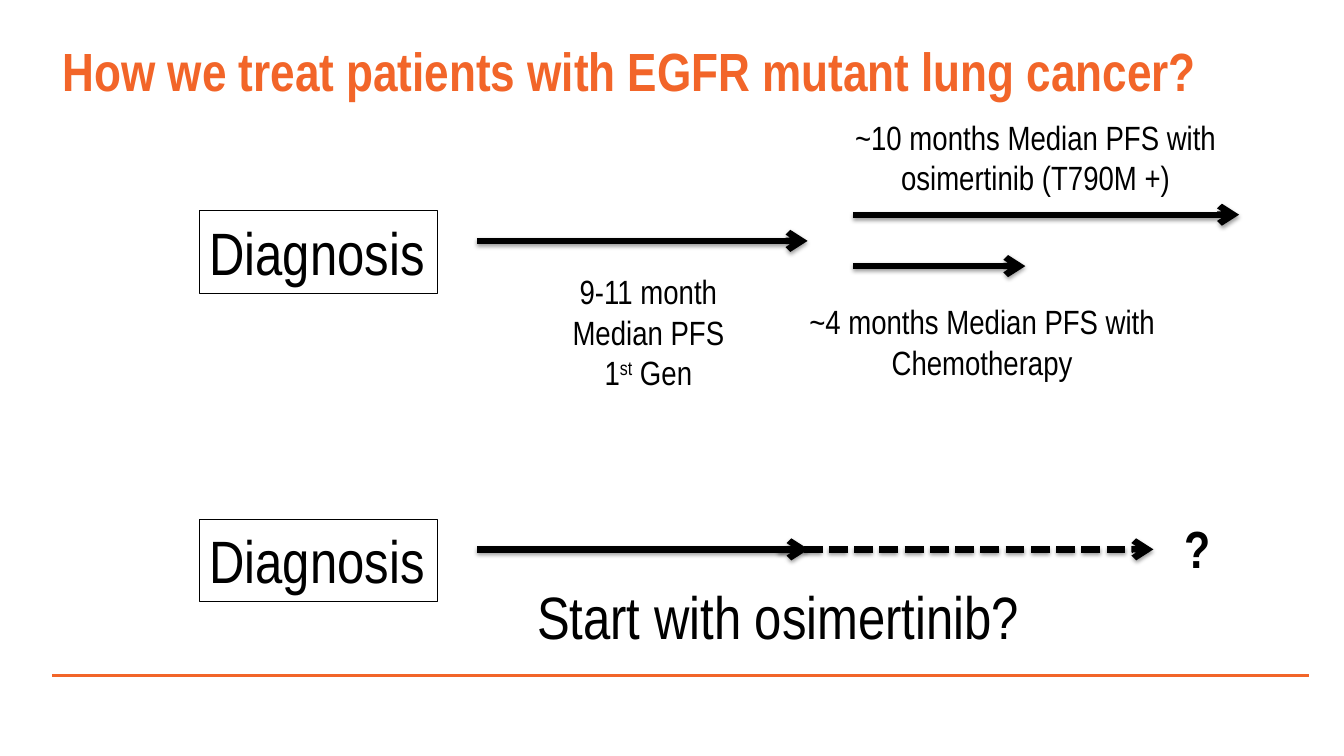
import pptx
import pptx.util
import pptx.dml.color
import pptx.enum.dml
import pptx.enum.shapes
import pptx.enum.text
import pptx.oxml
import pptx.oxml.ns

Inches = pptx.util.Inches
Pt = pptx.util.Pt
Align = pptx.enum.text.PP_ALIGN
Fit = pptx.enum.text.MSO_AUTO_SIZE
NS = pptx.oxml.ns.nsdecls("a")
HUES = {name: pptx.dml.color.RGBColor.from_string(code)
        for name, code in {"ink": "000000", "orange": "F26529"}.items()}
SHADE = (f'<a:effectLst {NS}><a:outerShdw blurRad="{Pt(3.1)}" dist="{Pt(1.6)}" '
         'dir="5400000" rotWithShape="0"><a:srgbClr val="000000">'
         '<a:alpha val="38000"/></a:srgbClr></a:outerShdw></a:effectLst>')


def style(shape, size, hue="ink", bold=False, align=Align.LEFT):
    for para in shape.text_frame.paragraphs:
        para.alignment = align
        for run in para.runs:
            run.font.name = "Arial Narrow"
            run.font.size = Pt(size)
            run.font.bold = bold
            run.font.color.rgb = HUES[hue]


def draw(left, right, top, hue, width, effect):
    line = slide.shapes.add_connector(
        pptx.enum.shapes.MSO_CONNECTOR.STRAIGHT,
        Inches(left), Inches(top), Inches(right), Inches(top))
    line.line.color.rgb = HUES[hue]
    line.line.width = Pt(width)
    line._element.spPr.append(pptx.oxml.parse_xml(effect))
    return line


deck = pptx.Presentation()
deck.slide_width = Inches(13.33)
deck.slide_height = Inches(7.5)
slide = deck.slides.add_slide(deck.slide_layouts[5])

# Footer rule
draw(0.52, 12.98, 6.7, "orange", 2.25, f"<a:effectLst {NS}/>")

# Title
title = slide.shapes.title
title.left, title.top = Inches(0.52), Inches(0.1)
title.width, title.height = Inches(12.46), Inches(1.18)
title.text_frame.text = "How we treat patients with EGFR mutant lung cancer?"
title.text_frame.auto_size = Fit.NONE
title.text_frame.vertical_anchor = pptx.enum.text.MSO_ANCHOR.MIDDLE
style(title, 38.4, "orange", True)

# Diagnosis boxes, one per pathway
for top in (2.09, 5.15):
    box = slide.shapes.add_shape(
        pptx.enum.shapes.MSO_SHAPE.RECTANGLE,
        Inches(1.98), Inches(top), Inches(2.36), Inches(0.82))
    box.shadow.inherit = False
    box.fill.background()
    box.line.color.rgb = HUES["ink"]
    box.line.width = Pt(0.75)
    frame = box.text_frame
    frame.text = "Diagnosis"
    frame.word_wrap = False
    frame.auto_size = Fit.SHAPE_TO_FIT_TEXT
    frame.vertical_anchor = pptx.enum.text.MSO_ANCHOR.TOP
    style(box, 42.7)

# Treatment arrows: left, right, height, dashed
for left, right, top, dashed in (
        (4.73, 8.01, 2.39, False),
        (8.46, 12.29, 2.13, False),
        (8.46, 10.17, 2.64, False),
        (4.73, 8.02, 5.45, False),
        (7.72, 11.44, 5.45, True)):
    arrow = draw(left, right, top, "ink", 4.5, SHADE)
    if dashed:
        arrow.line.dash_style = pptx.enum.dml.MSO_LINE.SQUARE_DOT
    arrow.line._get_or_add_ln().append(
        pptx.oxml.parse_xml(f'<a:tailEnd {NS} type="arrow"/>'))

# Labels: place, text, size, bold, alignment, wrap
for place, text, size, bold, align, wrap in (
        ((5.57, 2.64, 1.72, 1.31), "9-11 month\nMedian PFS\n1",
         24, False, Align.CENTER, False),
        ((8.02, 1.11, 4.5, 0.91),
         "~10 months Median PFS with osimertinib (T790M +)",
         24, False, Align.CENTER, True),
        ((7.49, 2.94, 4.5, 0.91), "~4 months Median PFS with Chemotherapy",
         24, False, Align.CENTER, True),
        ((5.23, 5.7, 5.03, 0.82), "Start with osimertinib?",
         42.7, False, Align.LEFT, False),
        ((11.65, 5.07, 0.46, 0.73), "?", 37.3, True, Align.LEFT, False)):
    label = slide.shapes.add_textbox(*map(Inches, place))
    frame = label.text_frame
    frame.text = text
    frame.word_wrap = wrap
    frame.auto_size = Fit.SHAPE_TO_FIT_TEXT
    if text.endswith("\n1"):
        # Raised ordinal in "1st Gen"
        para = frame.paragraphs[-1]
        for part, base in (("st", "30000"), (" Gen", "0")):
            run = para.add_run()
            run.text = part
            run._r.get_or_add_rPr().set("baseline", base)
    style(label, size, "ink", bold, align)

deck.save("out.pptx")
